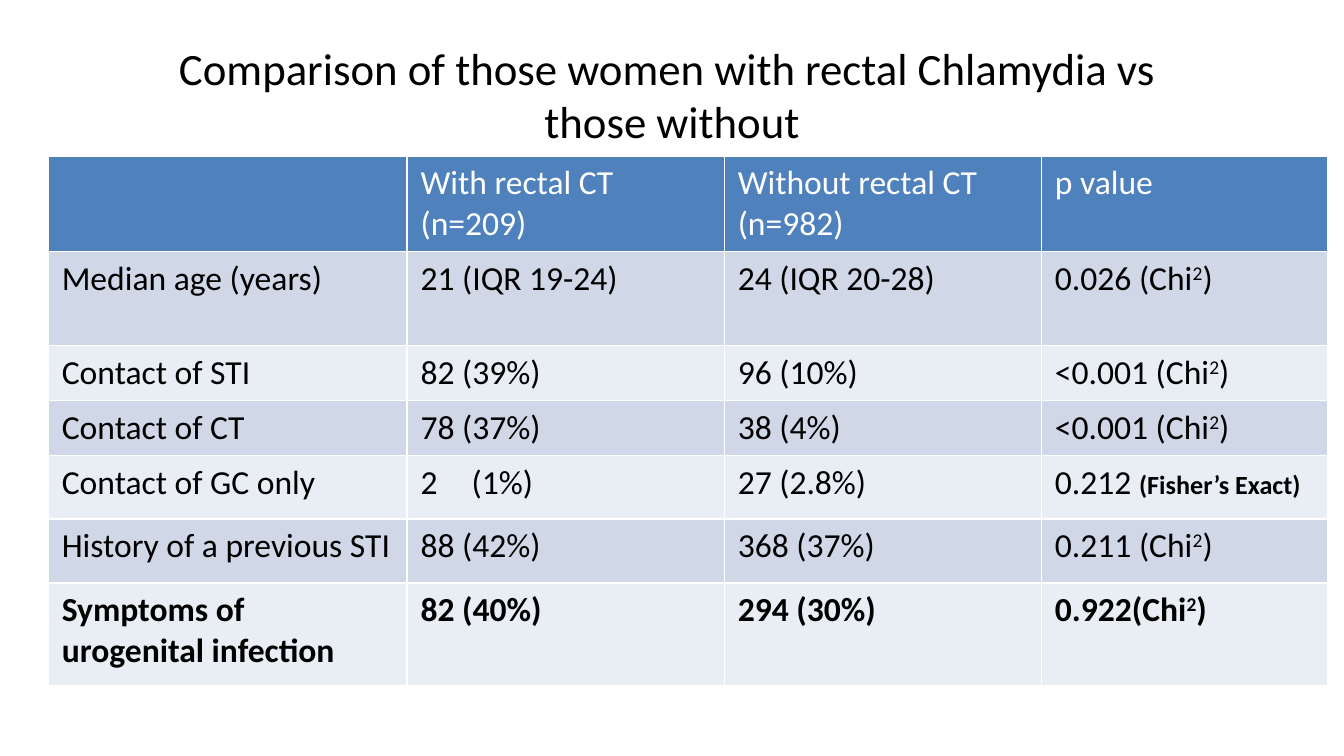
from lxml.etree import SubElement
from pptx import Presentation
from pptx.dml.color import RGBColor
from pptx.enum.text import MSO_ANCHOR, PP_ALIGN
from pptx.oxml.ns import qn
from pptx.util import Inches, Pt

THEME = {
    "font": "Calibri",
    "title_size": Pt(24),
    "body_size": Pt(18),
    "note_size": Pt(14),
    "text": RGBColor(0x00, 0x00, 0x00),
    "header_text": RGBColor(0xFF, 0xFF, 0xFF),
    "header_fill": RGBColor(0x4F, 0x81, 0xBD),
    "bands": [RGBColor(0xD0, 0xD8, 0xE8), RGBColor(0xE9, 0xED, 0xF4)],
}

COLUMN_WIDTHS = [2.67, 2.36, 2.36, 2.13]
ROW_HEIGHTS = [0.7, 0.7, 0.41, 0.41, 0.47, 0.48, 0.76]
SUPERSCRIPT = {"raised": True}
NOTE = {"size": THEME["note_size"], "bold": True}


def chi_squared(value):
    return [(f"{value}(Chi", {}), ("2", SUPERSCRIPT), (")", {})]


ROWS = [
    ["", "With rectal CT (n=209)", "Without rectal CT (n=982)", "p value"],
    ["Median age (years)", "21 (IQR 19-24)", "24 (IQR 20-28)", chi_squared("0.026 ")],
    ["Contact of STI", "82 (39%)", "96 (10%)", chi_squared("<0.001 ")],
    ["Contact of CT", "78 (37%)", "38 (4%)", chi_squared("<0.001 ")],
    ["Contact of GC only", "(1%)", "27 (2.8%)", [("0.212 ", {}), ("(Fisher’s Exact)", NOTE)]],
    ["History of a previous STI", "88 (42%)", "368 (37%)", chi_squared("0.211 ")],
    ["Symptoms of urogenital infection", "82 (40%)", "294 (30%)", chi_squared("0.922")],
]
BOLD_ROW = len(ROWS) - 1


def add_span(para, text, size, color, bold=False, raised=False):
    span = para.add_run()
    span.text = text
    for name, value in {"name": THEME["font"], "size": size, "bold": bold}.items():
        setattr(span.font, name, value)
    span.font.color.rgb = color
    if raised:
        span.font._element.set("baseline", "30000")


deck = Presentation()
deck.slide_width = Inches(10)
deck.slide_height = deck.slide_width * 9 // 16
page = deck.slides.add_slide(deck.slide_layouts[5])

# Title
title = page.shapes.title
title.left, title.top = Inches(0.5), Inches(0.23)
title.width, title.height = Inches(9), Inches(0.94)
title.text_frame.vertical_anchor = MSO_ANCHOR.MIDDLE
para = title.text_frame.paragraphs[0]
para.alignment = PP_ALIGN.CENTER
title_lines = ["Comparison of those women with rectal Chlamydia vs ", "those without"]
for index, line in enumerate(title_lines):
    if index:
        para.add_line_break()
    add_span(para, line, THEME["title_size"], THEME["text"])

# Comparison table; its default style supplies the white cell borders
table = page.shapes.add_table(
    len(ROWS), len(COLUMN_WIDTHS), Inches(0.36), Inches(1.16),
    Inches(sum(COLUMN_WIDTHS)), Inches(sum(ROW_HEIGHTS)),
).table
for column, width in zip(table.columns, COLUMN_WIDTHS):
    column.width = Inches(width)
for row, height in zip(table.rows, ROW_HEIGHTS):
    row.height = Inches(height)

for row_index, row in enumerate(ROWS):
    is_header = row_index == 0
    color = THEME["header_text"] if is_header else THEME["text"]
    fill = THEME["header_fill"] if is_header else THEME["bands"][(row_index - 1) % 2]
    for column_index, content in enumerate(row):
        cell = table.cell(row_index, column_index)
        cell.fill.solid()
        cell.fill.fore_color.rgb = fill
        if not content:
            continue
        spans = [(content, {})] if isinstance(content, str) else content
        for text, changes in spans:
            base = {"size": THEME["body_size"], "color": color, "bold": row_index == BOLD_ROW}
            add_span(cell.text_frame.paragraphs[0], text, **{**base, **changes})

# A wider right margin wraps the last label after "Symptoms of"
table.cell(BOLD_ROW, 0).margin_right = Inches(0.15)

# The count of GC contacts is an automatic number that starts at 2
properties = table.cell(4, 1).text_frame.paragraphs[0]._p.get_or_add_pPr()
properties.set("marL", str(Inches(0.38)))
properties.set("indent", str(Inches(-0.38)))
SubElement(properties, qn("a:buAutoNum"), type="arabicPlain", startAt="2")

deck.save("out.pptx")
